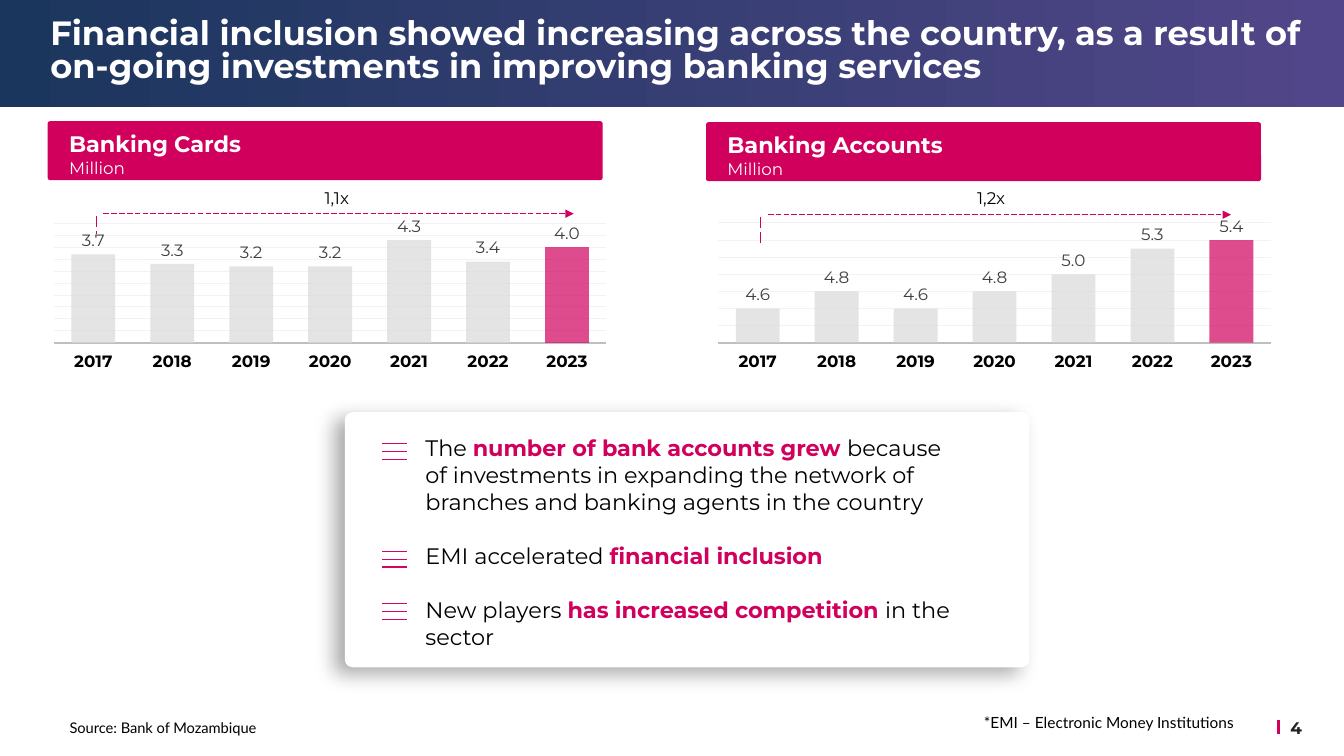
from dataclasses import dataclass

from lxml import etree
from pptx import Presentation
from pptx.chart.data import CategoryChartData
from pptx.dml.color import RGBColor
from pptx.enum.chart import XL_CHART_TYPE, XL_LABEL_POSITION, XL_TICK_LABEL_POSITION, XL_TICK_MARK
from pptx.enum.dml import MSO_LINE
from pptx.enum.shapes import MSO_CONNECTOR, MSO_SHAPE
from pptx.enum.text import MSO_ANCHOR, MSO_AUTO_SIZE, PP_ALIGN
from pptx.oxml import parse_xml
from pptx.oxml.ns import nsdecls, qn
from pptx.util import Inches, Pt

COLUMNS = CLUSTERED = XL_CHART_TYPE.COLUMN_CLUSTERED
OUTSIDE = XL_LABEL_POSITION.OUTSIDE_END
LABELS_LOW = XL_TICK_LABEL_POSITION.LOW
NO_TICK = XL_TICK_MARK.NONE
DASHED = MSO_LINE.LONG_DASH
STRAIGHT = MSO_CONNECTOR.STRAIGHT
RECTANGLE, ROUNDED = MSO_SHAPE.RECTANGLE, MSO_SHAPE.ROUNDED_RECTANGLE
TOP, NO_FIT = MSO_ANCHOR.TOP, MSO_AUTO_SIZE.NONE
LEFT, CENTER, JUSTIFY = PP_ALIGN.LEFT, PP_ALIGN.CENTER, PP_ALIGN.JUSTIFY

GRID_COLUMNS, GRID_ROWS = 133.3, 75
YEARS = [str(year) for year in range(2017, 2024)]


@dataclass(frozen=True)
class Theme:
    heading_font: str = "Montserrat"
    note_font: str = "Lato"
    pink: str = "D1005D"
    bullet: str = "D40462"
    navy: str = "1B365D"
    purple: str = "514689"
    white: str = "FFFFFF"
    black: str = "000000"
    page_ink: str = "202528"
    label: str = "404040"
    bar: str = "D9D9D9"
    grid: str = "F2F2F2"
    axis: str = "BFBFBF"
    title_size: float = 24
    body_size: float = 16
    small_size: float = 12
    note_size: float = 11
    source_size: float = 10.5


THEME = Theme()


@dataclass(frozen=True)
class Panel:
    """One chart with its banner and growth arrow, placed in grid cells."""
    heading: str
    growth: str
    values: tuple
    scale: tuple
    banner: tuple
    chart_left: float
    growth_left: float
    arrow_top: float
    tick: tuple
    arrow_right: float


PANELS = (
    Panel("Banking Cards", "1,1x", (3.7, 3.3, 3.2, 3.2, 4.3, 3.4, 4.0), (0, 5, 0.5),
          (4.8, 12.1), 4.2, 30.3, 21.2, (21.4, 23.2), 56.9),
    Panel("Banking Accounts", "1,2x", (4.6, 4.8, 4.6, 4.8, 5.0, 5.3, 5.4), (4.2, 5.6, 0.2),
          (7.01 * 10, 12.2), 70.1, 95.2, 21.3, (21.5, 24.4), 122.1),
)

# Each point: row of its bullet, then (text, emphasised) spans.
POINTS = (
    (44, (("The ", False), ("number of bank accounts grew ", True),
          ("because of investments in expanding the network of branches "
           "and banking agents in the country", False))),
    (54.7, (("EMI accelerated ", False), ("financial inclusion", True))),
    (59.9, (("New players ", False), ("has increased competition ", True),
            ("in the sector", False))),
)


def cells(count):
    return round(count * Inches(0.1))


def rgb(value):
    return RGBColor.from_string(value)


def style_font(font, size, color, bold=False, name=THEME.heading_font):
    font.name, font.size, font.bold = name, Pt(size), bold
    font.color.rgb = rgb(color)


def add_text(page, area, text, size, color, bold=False, name=THEME.heading_font,
             align=LEFT, wrap=True):
    box = page.shapes.add_textbox(*map(cells, area))
    box.text_frame.word_wrap = wrap
    para = box.text_frame.paragraphs[0]
    para.text, para.alignment = text, align
    style_font(para.runs[0].font, size, color, bold, name)
    return box


def add_block(page, kind, area, color, corner=None):
    block = page.shapes.add_shape(kind, *map(cells, area))
    block.shadow.inherit = False
    block.fill.solid()
    block.fill.fore_color.rgb = rgb(color)
    block.line.fill.background()
    if corner is not None:
        block.adjustments[0] = corner
    return block


def add_rule(page, start, end, color, width, dashed=False, arrow=False):
    rule = page.shapes.add_connector(STRAIGHT, *map(cells, (*start, *end)))
    rule.line.color.rgb, rule.line.width = rgb(color), Pt(width)
    if dashed:
        rule.line.dash_style = DASHED
    properties = rule._element.spPr
    if arrow:
        etree.SubElement(properties.find(qn("a:ln")), qn("a:tailEnd"), type="triangle")
    etree.SubElement(properties, qn("a:effectLst"))


def place_in_front(page, placeholder, area):
    """Move a placeholder to an area and above the shapes drawn so far."""
    placeholder.left, placeholder.top, placeholder.width, placeholder.height = map(cells, area)
    page.shapes._spTree.append(placeholder._element)
    frame = placeholder.text_frame
    frame.word_wrap, frame.auto_size, frame.vertical_anchor = True, NO_FIT, TOP
    return frame


def add_header(page):
    header = add_block(page, RECTANGLE, (0, 0, GRID_COLUMNS, 10.6), THEME.navy)
    header.fill.gradient()
    header.fill.gradient_angle = 0
    for stop, color, position in zip(header.fill.gradient_stops,
                                     (THEME.navy, THEME.purple), (0, 1)):
        stop.color.rgb, stop.position = rgb(color), position
    frame = place_in_front(page, page.shapes.title, (4, 1.5, 126, 7.5))
    frame.text = ("Financial inclusion showed increasing across the country, as a result "
                  "of on-going investments in improving banking services")
    para = frame.paragraphs[0]
    para.alignment, para.line_spacing = JUSTIFY, 0.8
    style_font(para.runs[0].font, THEME.title_size, THEME.white, True)


def add_banner(page, panel):
    banner = add_block(page, ROUNDED, (*panel.banner, 54.9, 5.7), THEME.pink, 0.03)
    banner.line.color.rgb, banner.line.width = rgb(THEME.pink), Pt(1)
    frame = banner.text_frame
    frame.vertical_anchor = TOP
    frame.margin_left, frame.margin_top, frame.margin_bottom = cells(2), cells(0.8), 0
    frame.text = f"{panel.heading}\nMillion"
    for para, size, bold in zip(frame.paragraphs, (THEME.body_size, THEME.small_size),
                                (True, False)):
        para.alignment = LEFT
        style_font(para.runs[0].font, size, THEME.white, bold)


def fill_bar(bar, color):
    bar.format.fill.solid()
    bar.format.fill.fore_color.rgb = rgb(color)
    tint = bar.format.fill._xPr.find(qn("a:solidFill"))[0]
    etree.SubElement(tint, qn("a:alpha"), val="70000")


def add_column_chart(page, panel):
    data = CategoryChartData(number_format="0.0")
    data.categories = YEARS
    data.add_series("Million", panel.values)
    area = (panel.chart_left, 21.5, 57.1, 15.4)
    chart = page.shapes.add_chart(COLUMNS, *map(cells, area), data).chart
    chart.has_legend = chart.has_title = False
    style_font(chart.font, THEME.small_size, THEME.black)

    years, amounts = chart.category_axis, chart.value_axis
    years.major_tick_mark, years.tick_label_position = NO_TICK, LABELS_LOW
    years.format.line.color.rgb, years.format.line.width = rgb(THEME.axis), Pt(1.25)
    style_font(years.tick_labels.font, THEME.small_size, THEME.black, True)
    amounts.minimum_scale, amounts.maximum_scale, amounts.major_unit = panel.scale
    amounts.visible = False
    grid = amounts.major_gridlines.format.line
    grid.color.rgb, grid.width = rgb(THEME.grid), Pt(0.75)

    plot = chart.plots[0]
    plot.gap_width, plot.overlap, plot.vary_by_categories = 80, 25, False
    plot.has_data_labels = True
    labels = plot.data_labels
    labels.show_value, labels.position = True, OUTSIDE
    labels.number_format, labels.number_format_is_linked = "0.0", False
    style_font(labels.font, THEME.small_size, THEME.label)
    fill_bar(plot.series[0], THEME.bar)
    fill_bar(plot.series[0].points[len(YEARS) - 1], THEME.pink)

    plot_area = chart._chartSpace.chart.plotArea
    for layout in plot_area.findall(qn("c:layout")):
        plot_area.remove(layout)
    shares = "".join(f'<c:{key} val="{share}"/>' for key, share in
                     (("x", 0.02), ("y", 0.04), ("w", 0.96), ("h", 0.79)))
    plot_area.insert(0, parse_xml(
        f'<c:layout {nsdecls("c")}><c:manualLayout><c:layoutTarget val="inner"/>'
        f'<c:xMode val="edge"/><c:yMode val="edge"/>{shares}</c:manualLayout></c:layout>'))


def add_growth(page, panel):
    tick_left = panel.chart_left + 5.35
    add_rule(page, (tick_left, panel.tick[0]), (tick_left, panel.tick[1]),
             THEME.pink, 1, dashed=True)
    add_rule(page, (tick_left + 0.7, panel.arrow_top), (panel.arrow_right, panel.arrow_top),
             THEME.pink, 0.5, dashed=True, arrow=True)
    add_text(page, (panel.growth_left, 18.15, 6.2, 3), panel.growth,
             THEME.small_size, THEME.black, align=CENTER)


def add_points(page):
    card = add_block(page, ROUNDED, (34.2, 40.9, 67.9, 25.3), THEME.white, 0.03)
    effects = card._element.spPr.find(qn("a:effectLst"))
    shadow = etree.SubElement(effects, qn("a:outerShdw"), blurRad=str(Pt(14)),
                              dist=str(Pt(9)), dir=str(150 * 60000), rotWithShape="0")
    shade = etree.SubElement(shadow, qn("a:srgbClr"), val=THEME.black)
    etree.SubElement(shade, qn("a:alpha"), val="33000")

    frame = place_in_front(page, page.placeholders[1], (41.2, 42.6, 55.3, 22.6))
    for index, (bullet_row, spans) in enumerate(POINTS):
        para = frame.add_paragraph() if index else frame.paragraphs[0]
        properties = para._p.get_or_add_pPr()
        properties.set("marL", "0")
        properties.set("indent", "0")
        etree.SubElement(properties, qn("a:buNone"))
        para.alignment, para.space_before = LEFT, Pt(19.5 if index else 0)
        for text, strong in spans:
            span = para.add_run()
            span.text = text
            style_font(span.font, THEME.body_size, THEME.pink if strong else THEME.black, strong)
        for stroke in range(3):
            row = bullet_row + stroke * 0.78
            add_rule(page, (37.9, row), (40.4, row), THEME.bullet, 1)


def add_footer(page):
    source = add_text(page, (6.9, 71.3, 37.4, 1.8), "Source: Bank of Mozambique",
                      THEME.source_size, THEME.black, name=THEME.note_font).text_frame
    source.margin_left = source.margin_right = source.margin_top = source.margin_bottom = 0
    add_text(page, (96.6, 70.3, 26.9, 2.9), "*EMI – Electronic Money Institutions",
             THEME.note_size, THEME.black, name=THEME.note_font, wrap=False)
    add_rule(page, (126.8, 71.4), (126.8, 72.8), THEME.pink, 2.25)
    add_text(page, (127, 70.7, 5.5, 3), "4", THEME.small_size, THEME.page_ink, True)


def main():
    deck = Presentation()
    deck.slide_width, deck.slide_height = cells(GRID_COLUMNS), cells(GRID_ROWS)
    page = deck.slides.add_slide(deck.slide_layouts[1])
    add_header(page)
    for panel in PANELS:
        add_banner(page, panel)
        add_column_chart(page, panel)
        add_growth(page, panel)
    add_points(page)
    add_footer(page)
    deck.save("out.pptx")


if __name__ == "__main__":
    main()
